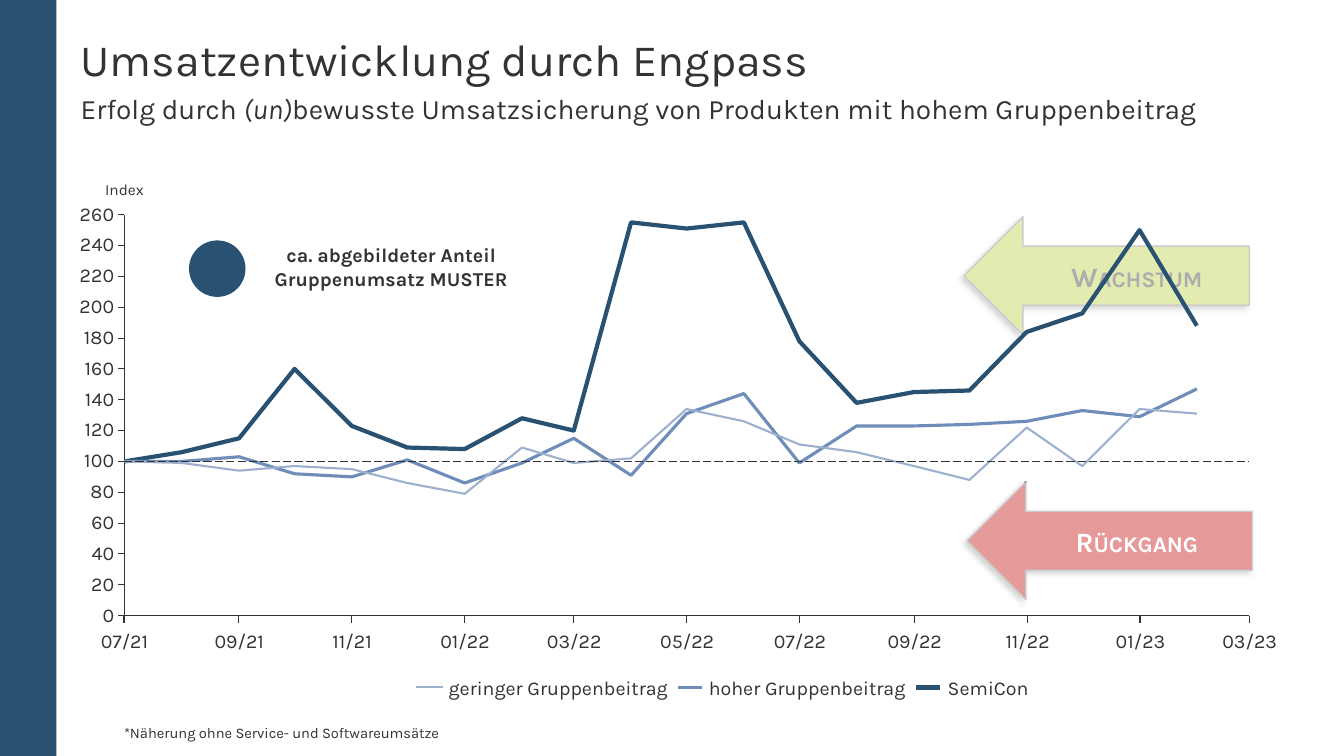
"""Build the slide on revenue development during the supply bottleneck."""
from itertools import accumulate, cycle, islice

from lxml import etree
from pptx import Presentation
from pptx.chart.data import XyChartData
from pptx.dml.color import RGBColor
from pptx.enum.chart import XL_CHART_TYPE as ChartType, XL_TICK_LABEL_POSITION as LabelPosition
from pptx.enum.chart import XL_TICK_MARK as TickMark
from pptx.enum.dml import MSO_LINE as Dash
from pptx.enum.shapes import MSO_CONNECTOR as Connector, MSO_SHAPE as Shape
from pptx.enum.text import MSO_ANCHOR as Anchor, MSO_AUTO_SIZE as AutoSize, PP_ALIGN as Align
from pptx.oxml import parse_xml
from pptx.oxml.ns import nsdecls, qn
from pptx.util import Inches, Pt

NAVY = RGBColor(0x28, 0x51, 0x72)
BLUE = RGBColor(0x6F, 0x8D, 0xB9)
PALE_BLUE = RGBColor(0x9D, 0xB1, 0xCF)
INK = RGBColor(0x33, 0x33, 0x33)
GREY = RGBColor(0x80, 0x80, 0x80)
GREEN = RGBColor(0xBB, 0xD0, 0x3A)
RED = RGBColor(0xC0, 0x00, 0x00)
WHITE = RGBColor(0xFF, 0xFF, 0xFF)

MONTH_LENGTHS = [31, 31, 30, 31, 30, 31, 31, 28, 31, 30, 31, 30]
MONTH_STARTS = list(accumulate(islice(cycle(MONTH_LENGTHS), 20), initial=18809))
AXIS_LEFT, AXIS_RIGHT, AXIS_BOTTOM = 1.23, 12.39, 6.11

SERIES = [
    ("geringer Gruppenbeitrag", PALE_BLUE, 1.5,
     [100, 99, 94, 97, 95, 86, 79, 109, 99, 102, 134, 126, 111, 106, 97, 88, 122, 97, 134, 131]),
    ("hoher Gruppenbeitrag", BLUE, 2.25,
     [100, 100, 103, 92, 90, 101, 86, 99, 115, 91, 131, 144, 99, 123, 123, 124, 126, 133, 129, 147]),
    ("SemiCon", NAVY, 3,
     [100, 106, 115, 160, 123, 109, 108, 128, 120, 255, 251, 255, 178, 138, 145, 146, 184, 196, 250, 188]),
]
LEGEND = [(4.13, 4.39, 4.45, 2.14), (6.72, 6.96, 7.03, 1.92), (9.09, 9.32, 9.4, 0.76)]


class SlideBuilder:
    """Hold the font style and the current slide."""

    def __init__(self, presentation, font_name):
        self.slide = presentation.slides.add_slide(presentation.slide_layouts[1])
        self.shapes = self.slide.shapes
        self.font_name = font_name

    def style(self, font, color=INK, **values):
        for name, value in {"name": self.font_name, **values}.items():
            setattr(font, name, value)
        font.color.rgb = color

    def frame(self, shape, anchor=Anchor.TOP, wrap=True):
        values = dict(margin_left=0, margin_top=0, margin_right=0, margin_bottom=0,
                      auto_size=AutoSize.NONE, vertical_anchor=anchor, word_wrap=wrap)
        for name, value in values.items():
            setattr(shape.text_frame, name, value)
        return shape.text_frame.paragraphs[0]

    def placeholder(self, index, box, runs, size, **paragraph_values):
        shape = self.slide.placeholders[index]
        shape.left, shape.top, shape.width, shape.height = map(Inches, box)
        paragraph = self.frame(shape)
        properties = paragraph._p.get_or_add_pPr()
        properties.set("marL", "0")
        properties.set("indent", "0")
        etree.SubElement(properties, qn("a:buNone"))
        for name, value in {"alignment": Align.LEFT, "space_before": Pt(0), **paragraph_values}.items():
            setattr(paragraph, name, value)
        for text, italic in runs:
            run = paragraph.add_run()
            run.text = text
            self.style(run.font, size=Pt(size), italic=italic)

    def text(self, box, text, size=14, color=INK, bold=False, small_caps=False,
             align=Align.CENTER, anchor=Anchor.TOP, wrap=False):
        paragraph = self.frame(self.shapes.add_textbox(*map(Inches, box)), anchor, wrap)
        paragraph.alignment = align
        run = paragraph.add_run()
        run.text = text
        self.style(run.font, color, size=Pt(size), bold=bold)
        if small_caps:
            run.font._element.set("cap", "small")

    def shape(self, kind, box, fill, line=None, line_width=0.75, alpha=None):
        shape = self.shapes.add_shape(kind, *map(Inches, box))
        shape.shadow.inherit = False
        shape.fill.solid()
        shape.fill.fore_color.rgb = fill
        if line is None:
            shape.line.fill.background()
        else:
            shape.line.color.rgb = line
            shape.line.width = Pt(line_width)
        if alpha:
            color = shape._element.spPr.find(".//" + qn("a:srgbClr"))
            etree.SubElement(color, qn("a:alpha")).set("val", str(alpha * 1000))
        return shape

    def line(self, start, end, color=INK, width=0.75, dash=None):
        connector = self.shapes.add_connector(Connector.STRAIGHT, *map(Inches, (*start, *end)))
        connector.line.color.rgb = color
        connector.line.width = Pt(width)
        if dash:
            connector.line.dash_style = dash
        etree.SubElement(connector._element.spPr, qn("a:effectLst"))

    def faded_arrow(self, arrow_box, text_top, veil_box, fill, label, color):
        arrow = self.shape(Shape.DOWN_ARROW, arrow_box, fill, GREY, 1)
        arrow.rotation = 90
        effects = arrow._element.spPr.find(qn("a:effectLst"))
        effects.append(parse_xml(
            f'<a:outerShdw {nsdecls("a")} blurRad="{Pt(4)}" dist="{Pt(3)}" dir="8100000" '
            'rotWithShape="0"><a:srgbClr val="000000"><a:alpha val="40000"/></a:srgbClr></a:outerShdw>'))
        self.text((10.19, text_top, 2.17, 0.34), label, 20, color, bold=True, small_caps=True, wrap=True)
        self.shape(Shape.RECTANGLE, veil_box, WHITE, alpha=60)

    def chart(self, box):
        data = XyChartData()
        for name, _, _, values in SERIES:
            points = data.add_series(name)
            for day, value in zip(MONTH_STARTS, values):
                points.add_data_point(day, value)
        chart = self.shapes.add_chart(
            ChartType.XY_SCATTER_LINES_NO_MARKERS, *map(Inches, box), data).chart
        chart.has_legend = chart.has_title = False
        self.style(chart.font, size=Pt(10))
        chart.plots[0].vary_by_categories = False
        for series, (_, color, width, _) in zip(chart.plots[0].series, SERIES):
            series.smooth = False
            series.format.line.color.rgb = color
            series.format.line.width = Pt(width)
        axes = [
            (chart.category_axis, dict(minimum_scale=MONTH_STARTS[0], maximum_scale=MONTH_STARTS[-1],
                                       major_tick_mark=TickMark.NONE,
                                       tick_label_position=LabelPosition.NONE)),
            (chart.value_axis, dict(minimum_scale=0, maximum_scale=260, major_unit=20,
                                    major_tick_mark=TickMark.OUTSIDE)),
        ]
        for axis, values in axes:
            common = dict(has_major_gridlines=False, has_title=False, minor_tick_mark=TickMark.NONE)
            for name, value in {**common, **values}.items():
                setattr(axis, name, value)
            axis.format.line.color.rgb = INK
            axis.format.line.width = Pt(0.75)
        labels = chart.value_axis.tick_labels
        labels.number_format = '#,##0;"-"#,##0'
        labels.number_format_is_linked = False
        self.style(labels.font, size=Pt(14))
        plot_area = chart._chartSpace.find(".//" + qn("c:plotArea"))
        for layout in plot_area.findall(qn("c:layout")):
            plot_area.remove(layout)
        places = "".join(f'<c:{tag} val="{value}"/>' for tag, value in (
            ("layoutTarget", "inner"), ("xMode", "edge"), ("yMode", "edge"),
            ("x", 0.051), ("y", 0.033), ("w", 0.941), ("h", 0.934)))
        plot_area.insert(0, parse_xml(
            f'<c:layout {nsdecls("c")}><c:manualLayout>{places}</c:manualLayout></c:layout>'))


def main():
    presentation = Presentation()
    presentation.slide_width, presentation.slide_height = Inches(13.33), Inches(7.5)
    builder = SlideBuilder(presentation, "Karla")
    builder.shape(Shape.RECTANGLE, (0, 0, 0.56, 7.5), NAVY)
    builder.placeholder(0, (0.8, 0.37, 11.97, 0.54), [("Umsatzentwicklung durch Engpass", False)],
                        32, line_spacing=0.9)
    builder.placeholder(1, (0.8, 0.91, 11.97, 0.41), [
        ("Erfolg durch ", False), ("(un)", True),
        ("bewusste Umsatzsicherung von Produkten mit hohem Gruppenbeitrag", False)],
        20, space_after=Pt(6))
    builder.faded_arrow((10.39, 1.32, 1.17, 2.83), 2.57, (9.34, 2.01, 3.32, 1.5), GREEN, "Wachstum", INK)
    builder.chart((0.63, 1.99, 11.85, 4.26))

    scale = (AXIS_RIGHT - AXIS_LEFT) / (MONTH_STARTS[-1] - MONTH_STARTS[0])
    for index in range(0, len(MONTH_STARTS), 2):
        x = AXIS_LEFT + (MONTH_STARTS[index] - MONTH_STARTS[0]) * scale
        years, month = divmod(index + 6, 12)
        builder.line((x, AXIS_BOTTOM), (x, AXIS_BOTTOM + 0.07))
        builder.text((x - 0.24, 6.24, 0.49, 0.23), f"{month + 1:02}/{21 + years}")
    builder.line((AXIS_LEFT, 4.58), (AXIS_RIGHT, 4.58), dash=Dash.LONG_DASH)
    builder.text((1.05, 1.79, 0.37, 0.18), "Index", 11, anchor=Anchor.BOTTOM)

    for (name, color, width, _), (start, end, left, text_width) in zip(SERIES, LEGEND):
        builder.line((start, 6.82), (end, 6.82), color, width)
        builder.text((left, 6.71, text_width, 0.23), name, align=Align.LEFT, anchor=Anchor.MIDDLE)

    builder.faded_arrow((10.42, 3.95, 1.17, 2.83), 5.2, (9.31, 4.79, 3.32, 1.21), RED, "Rückgang", WHITE)
    builder.shape(Shape.OVAL, (1.88, 2.39, 0.55, 0.55), NAVY, NAVY)
    builder.text((2.37, 2.41, 3.02, 0.47), "ca. abgebildeter Anteil Gruppenumsatz MUSTER",
                 bold=True, wrap=True)
    builder.text((1.23, 7.18, 4.58, 0.18), "*Näherung ohne Service- und Softwareumsätze", 10.5,
                 align=Align.LEFT, wrap=True)
    presentation.save("out.pptx")


if __name__ == "__main__":
    main()
